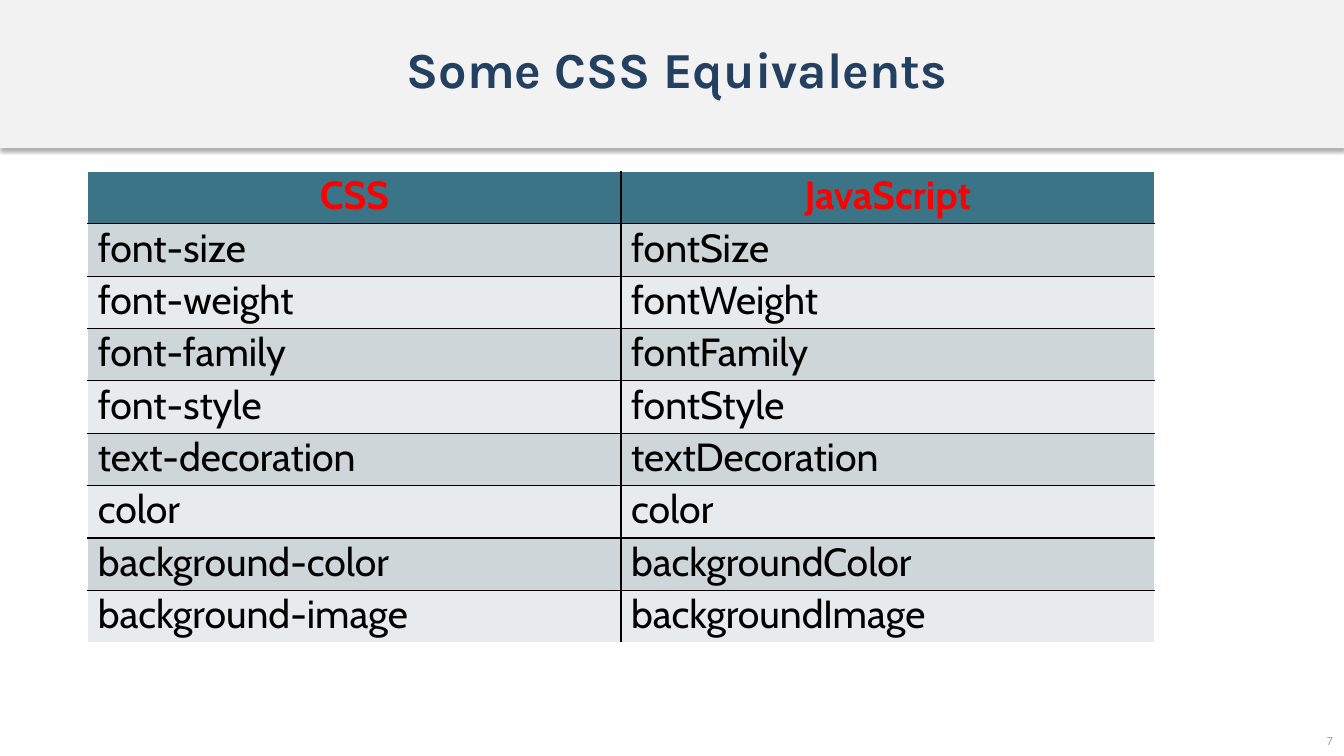
from lxml.etree import SubElement
from pptx import Presentation
from pptx.dml.color import RGBColor
from pptx.enum.shapes import MSO_SHAPE
from pptx.enum.text import MSO_ANCHOR, PP_ALIGN
from pptx.oxml import parse_xml
from pptx.oxml.ns import nsdecls, qn
from pptx.util import Inches, Pt


def color(value):
    return RGBColor.from_string(value)


def add_text(frame, text, font_name, size, ink, bold, align):
    frame.word_wrap = True
    frame.vertical_anchor = MSO_ANCHOR.MIDDLE
    paragraph = frame.paragraphs[0]
    paragraph.alignment = align
    run = paragraph.add_run()
    run.text = text
    run.font.name = font_name
    run.font.size = Pt(size)
    run.font.bold = bold
    run.font.color.rgb = color(ink)
    return run


prs = Presentation()
prs.slide_width = Inches(13.33)
prs.slide_height = Inches(7.5)
slide = prs.slides.add_slide(prs.slide_layouts[6])

header = slide.shapes.add_shape(MSO_SHAPE.RECTANGLE, 0, 0, prs.slide_width, Inches(1.47))
header.fill.solid()
header.fill.fore_color.rgb = color("F2F2F2")
header.line.fill.background()
header.shadow.inherit = False
effects = header.fill._xPr.find(qn("a:effectLst"))
effects.append(parse_xml(
    f'<a:outerShdw {nsdecls("a")} blurRad="{Pt(3.1)}" dist="{Pt(1.8)}" dir="5400000" rotWithShape="0">'
    '<a:srgbClr val="000000"><a:alpha val="35000"/></a:srgbClr></a:outerShdw>'))

title = slide.shapes.add_textbox(Inches(0.25), Inches(0.09), Inches(12.93), Inches(1.18))
add_text(title.text_frame, "Some CSS Equivalents", "Karla", 36, "244061", True, PP_ALIGN.CENTER)

equivalents = [
    ("CSS", "JavaScript"),
    ("font-size", "fontSize"),
    ("font-weight", "fontWeight"),
    ("font-family", "fontFamily"),
    ("font-style", "fontStyle"),
    ("text-decoration", "textDecoration"),
    ("color", "color"),
    ("background-color", "backgroundColor"),
    ("background-image", "backgroundImage"),
]
row_height = Inches(0.52)
last_row = len(equivalents) - 1
table = slide.shapes.add_table(len(equivalents), 2, Inches(0.87), Inches(1.7),
                               Inches(10.58), row_height * len(equivalents)).table

for row, names in enumerate(equivalents):
    table.rows[row].height = row_height
    is_head = row == 0
    band = "3B7487" if is_head else ("E8EBED", "CED6D9")[row % 2]
    for column, name in enumerate(names):
        cell = table.cell(row, column)
        cell.margin_left = cell.margin_right = Inches(0.1)
        cell.margin_top = Inches(0.01)
        cell.margin_bottom = Inches(0.05)
        cell.vertical_anchor = MSO_ANCHOR.MIDDLE
        add_text(cell.text_frame, name, "Cabin", 28, "FF0000" if is_head else "000000",
                 is_head, PP_ALIGN.CENTER if is_head else PP_ALIGN.LEFT)
        cell.text_frame.paragraphs[0].line_spacing = 0.98
        borders = {
            "a:lnL": "000000" if column else "FFFFFF",
            "a:lnR": "FFFFFF" if column else "000000",
            "a:lnT": "FFFFFF" if is_head else "000000",
            "a:lnB": "FFFFFF" if row == last_row else "000000",
        }
        properties = cell._tc.get_or_add_tcPr()
        for side, ink in borders.items():
            border = SubElement(properties, qn(side), w=str(Pt(1)))
            fill = SubElement(border, qn("a:solidFill"))
            SubElement(fill, qn("a:srgbClr"), val=ink)
        cell.fill.solid()
        cell.fill.fore_color.rgb = color(band)

page_number = slide.shapes.add_textbox(Inches(12.62), Inches(7.21), Inches(0.7), Inches(0.27))
number_run = add_text(page_number.text_frame, "7", "Calibri", 9, "404040", False, PP_ALIGN.RIGHT)
number_color = number_run.font.fill._xPr.find(".//" + qn("a:srgbClr"))
SubElement(number_color, qn("a:alpha"), val="50000")

prs.save("out.pptx")
